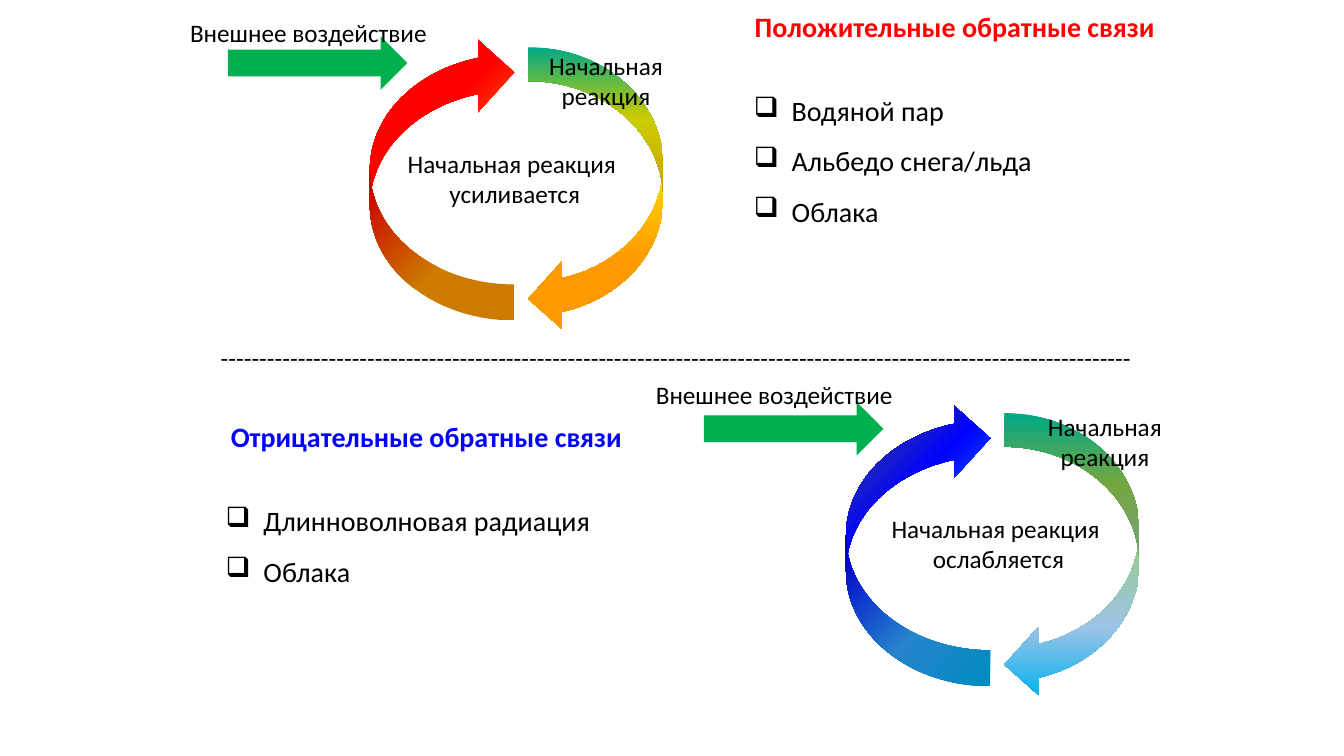
import pptx
import pptx.util
import pptx.dml.color
import pptx.enum.shapes
import pptx.enum.text
import pptx.oxml
import pptx.oxml.ns

Pt = pptx.util.Pt
RGB = pptx.dml.color.RGBColor
SHAPE = pptx.enum.shapes.MSO_SHAPE
ALIGN = pptx.enum.text.PP_ALIGN
FIT = pptx.enum.text.MSO_AUTO_SIZE

BLACK = RGB(0, 0, 0)
GREEN = RGB(0x00, 0xB0, 0x50)
RED = RGB(0xFF, 0, 0)
BLUE = RGB(0, 0, 0xFF)
FONT = "Calibri"

# Content: gradient stops are (percent, colour); places are in points
FIRST = ["Начальная ", "реакция "]
FORCE = ["Внешнее воздействие"]
LOOPS = [
    {"at": (162.7, 25.9),
     "right": [(0, "03D4A8"), (25, "FFFF00"), (75, "FF9900"), (100, "FF9900")],
     "left": [(0, "FF9900"), (30, "FF9900"), (65, "FF0000"),
              (100, "FF0000"), (100, "C00000")],
     "labels": [(FORCE, (127.4, 8.6, 185.8, 29)),
                (FIRST, (384.5, 32.4, 100.8, 51)),
                (["Начальная реакция ", "усиливается"],
                 (283, 102.2, 169.2, 51))]},
    {"at": (502.8, 287.2),
     "right": [(0, "03D4A8"), (25, "92D050"), (75, "9DC3E6"), (100, "00B0F0")],
     "left": [(0, "00B0F0"), (30, "2FA6FF"), (65, "0000FF"),
              (100, "44546A"), (100, "C00000")],
     "labels": [(FORCE, (460.1, 267.1, 185.8, 29)),
                (FIRST, (740.9, 290.2, 100.8, 51)),
                (["Начальная реакция ", "ослабляется"],
                 (628.6, 362.9, 169.2, 51))]},
]
LISTS = [
    ("Положительные обратные связи", RED, (531.4, 2.9, 301, 262),
     ["Водяной пар", "Альбедо снега/льда", "Облака"]),
    ("Отрицательные обратные связи", BLUE, (154.1, 295.8, 301, 128.3),
     ["Длинноволновая радиация", "Облака"]),
]
RULE = ("-" * 118, (133.9, 241.2, 697.7, 29))

# Parts of a loop, relative to its corner: left, top, width, height
ARROW = (0, 0, 128.2, 38.2)
RIGHT = (214.6, 7.9, 96.5, 203.8)
LEFT = (101.5, 0, 103, 203)

deck = pptx.Presentation()
deck.slide_width, deck.slide_height = Pt(960), Pt(540)
slide = deck.slides.add_slide(deck.slide_layouts[6])


def add_part(group, kind, corner, box):
    x, y, w, h = box
    part = group.shapes.add_shape(
        kind, Pt(corner[0] + x), Pt(corner[1] + y), Pt(w), Pt(h))
    part.shadow.inherit = False
    part.line.fill.background()
    return part


def shade(part, stops, angle):
    part.fill.gradient()
    grad = part._element.spPr.find(pptx.oxml.ns.qn("a:gradFill"))
    marks = "".join(
        f'<a:gs pos="{pos * 1000}"><a:srgbClr val="{tone}"/></a:gs>'
        for pos, tone in stops)
    grad.getparent().replace(grad, pptx.oxml.parse_xml(
        f'<a:gradFill {pptx.oxml.ns.nsdecls("a")} rotWithShape="1">'
        f'<a:gsLst>{marks}</a:gsLst>'
        f'<a:lin ang="{angle * 60000}" scaled="0"/></a:gradFill>'))


def add_frame(box, wrap):
    frame = slide.shapes.add_textbox(*map(Pt, box)).text_frame
    frame.word_wrap = wrap
    frame.auto_size = FIT.SHAPE_TO_FIT_TEXT
    return frame


def add_run(para, text, size, color=BLACK, bold=False):
    run = para.add_run()
    run.text = text
    run.font.name = FONT
    run.font.size = Pt(size)
    run.font.bold = bold
    run.font.color.rgb = color


def next_para(frame, index):
    return frame.add_paragraph() if index else frame.paragraphs[0]


def add_label(lines, box, wrap=False):
    frame = add_frame(box, wrap)
    for index, line in enumerate(lines):
        para = next_para(frame, index)
        para.alignment = ALIGN.CENTER
        add_run(para, line, 18)


def add_list(title, color, box, items):
    frame = add_frame(box, True)
    head = frame.paragraphs[0]
    head.alignment = ALIGN.CENTER
    add_run(head, title, 20, color, True)
    for index, item in enumerate(items):
        para = frame.add_paragraph()
        props = para._p.get_or_add_pPr()
        props.set("marL", str(Pt(27)))
        props.set("indent", str(-Pt(27)))
        props.append(pptx.oxml.parse_xml(
            f'<a:buChar {pptx.oxml.ns.nsdecls("a")} char="❑"/>'))
        para.line_spacing = 1.5
        if index == 0:
            para.space_before = Pt(24.4)
        add_run(para, item, 20)


# Loops of arrows
for loop in LOOPS:
    group = slide.shapes.add_group_shape()
    arrow = add_part(group, SHAPE.RIGHT_ARROW, loop["at"], ARROW)
    arrow.fill.solid()
    arrow.fill.fore_color.rgb = GREEN
    right = add_part(group, SHAPE.CURVED_LEFT_ARROW, loop["at"], RIGHT)
    shade(right, loop["right"], 90)
    left = add_part(group, SHAPE.CURVED_LEFT_ARROW, loop["at"], LEFT)
    left.rotation = 180
    shade(left, loop["left"], 45)

# Labels, lists and the dashed rule
for loop in LOOPS:
    for lines, box in loop["labels"]:
        add_label(lines, box)
for entry in LISTS:
    add_list(*entry)
add_label([RULE[0]], RULE[1], True)

deck.save("out.pptx")
